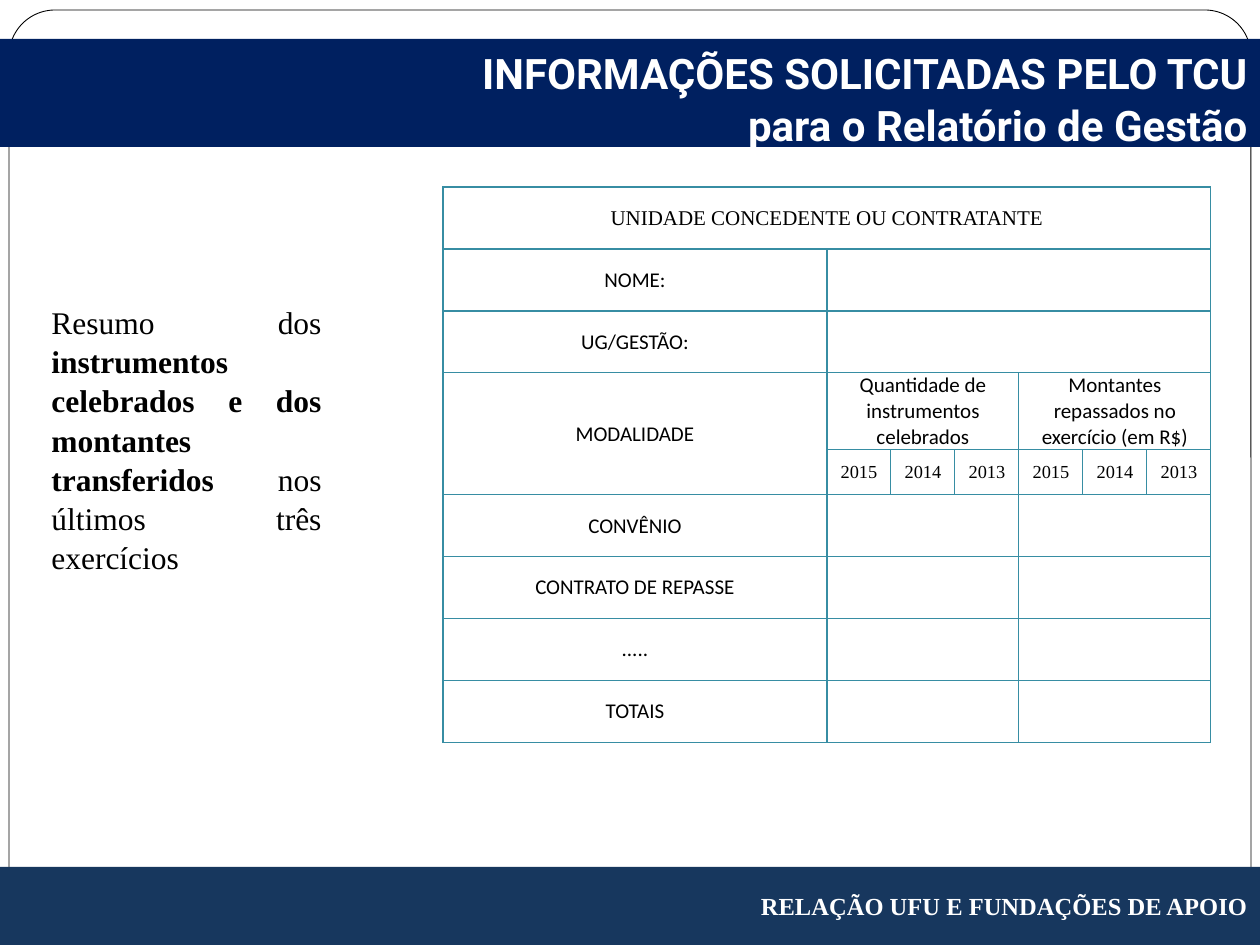
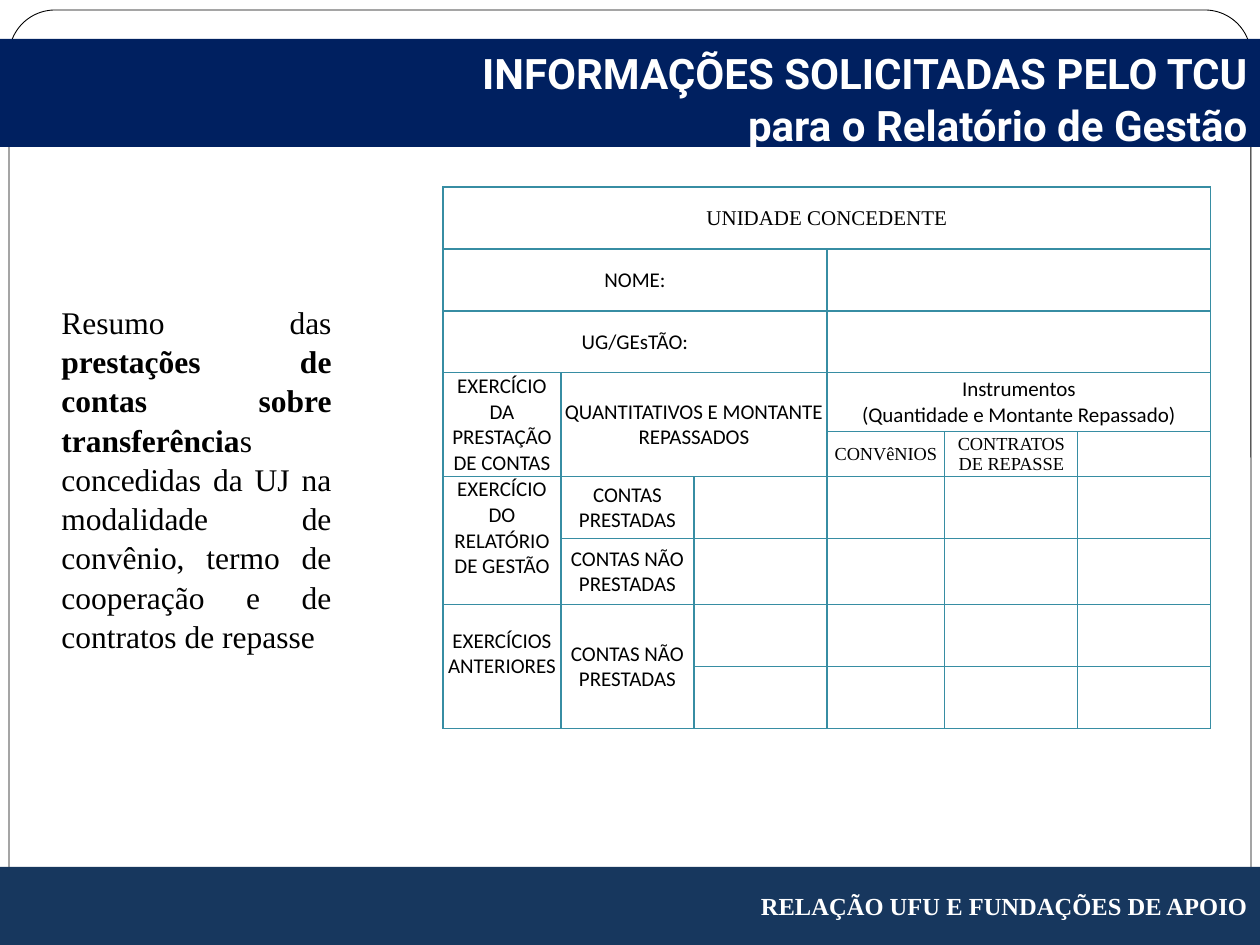
from itertools import product
from lxml import etree
from pptx import Presentation
from pptx import util as u
from pptx.dml.color import RGBColor
from pptx.enum import shapes, text
from pptx.oxml.ns import qn


class Theme:
    white = RGBColor.from_string("FFFFFF")
    black = RGBColor.from_string("000000")
    title_band = RGBColor.from_string("002060")
    footer_band = RGBColor.from_string("17375E")
    grid = "378DA3"
    title_size = 24
    body_size = 18
    footer_size = 14
    cell_size = 12
    subheading_size = 10.5
    frame_line = 0.5
    grid_line = 0.75
    spacing = 1.04
    serif = "Times New Roman"
    sans = "Calibri"
    display = "Roboto"


PX = u.Inches(1) / 126
TITLE = ["INFORMAÇÕES SOLICITADAS PELO TCU", "para o Relatório de Gestão"]
FOOTER = "RELAÇÃO UFU E FUNDAÇÕES DE APOIO"
HEADING_ROW, SUBHEADING_ROW = 0, 4
TRAILING_GAP = 26

YEARS = ["2015", "2014", "2013"]
MODALITIES = ["CONVÊNIO", "CONTRATO DE REPASSE", ".....", "TOTAIS"]

instruments = {
    "summary_left": 39,
    "summary": [
        ("Resumo dos ", False),
        ("instrumentos celebrados e dos montantes transferidos ", True),
        ("nos últimos três exercícios", False),
    ],
    "columns": [384] + [64] * 6,
    "rows": [62, 62, 62, 77, 45, 62, 62, 62, 62],
    "cells": [
        (0, 0, 1, 7, "UNIDADE CONCEDENTE OU CONTRATANTE"),
        (1, 0, 1, 1, "NOME:"),
        (1, 1, 1, 6, ""),
        (2, 0, 1, 1, "UG/GESTÃO:"),
        (2, 1, 1, 6, ""),
        (3, 0, 2, 1, "MODALIDADE"),
        (3, 1, 1, 3, "Quantidade de instrumentos celebrados"),
        (3, 4, 1, 3, "Montantes repassados no exercício (em R$)"),
    ]
    + [(4, col, 1, 1, year) for col, year in enumerate(YEARS * 2, 1)]
    + [(row, 0, 1, 1, name) for row, name in enumerate(MODALITIES, 5)]
    + [(row, col, 1, 3, "") for row, col in product(range(5, 9), (1, 4))],
}

accounts = {
    "summary_left": 49,
    "summary": [
        ("Resumo das ", False),
        ("prestações de contas sobre transferência", True),
        ("s concedidas da UJ na modalidade de convênio, termo de "
         "cooperação e de contratos de repasse", False),
    ],
    "columns": [118, 133, 133] * 2,
    "rows": [62, 62, 62, 59, 45, 62, 66, 62, 62],
    "cells": [
        (0, 0, 1, 6, "UNIDADE CONCEDENTE"),
        (1, 0, 1, 3, "NOME:"),
        (1, 3, 1, 3, ""),
        (2, 0, 1, 3, "UG/GEsTÃO:"),
        (2, 3, 1, 3, ""),
        (3, 0, 2, 1, "EXERCÍCIO DA PRESTAÇÃO DE CONTAS"),
        (3, 1, 2, 2, "QUANTITATIVOS E MONTANTE REPASSADOS"),
        (3, 3, 1, 3, "Instrumentos\n(Quantidade e Montante Repassado)"),
        (4, 3, 1, 1, "CONVêNIOS"),
        (4, 4, 1, 1, "CONTRATOS DE REPASSE"),
        (5, 0, 2, 1, "EXERCÍCIO DO RELATÓRIO DE GESTÃO"),
        (5, 1, 1, 1, "CONTAS PRESTADAS"),
        (6, 1, 1, 1, "CONTAS NÃO PRESTADAS"),
        (7, 0, 2, 1, "EXERCÍCIOS ANTERIORES"),
        (7, 1, 2, 1, "CONTAS NÃO PRESTADAS"),
    ],
}


def px(*lengths):
    return [u.Emu(round(length * PX)) for length in lengths]


def write(frame, lines, align, font, size, color, spacing=None):
    for index, runs in enumerate(lines):
        paragraph = frame.add_paragraph() if index else frame.paragraphs[0]
        paragraph.alignment = align
        if spacing:
            paragraph.line_spacing = spacing
        for words, bold in runs:
            run = paragraph.add_run()
            run.text = words
            run.font.name = font
            run.font.size = u.Pt(size)
            run.font.bold = bold
            run.font.color.rgb = color


deck = Presentation()
deck.slide_width, deck.slide_height = px(1260, 945)

for content in (instruments, accounts):
    slide = deck.slides.add_slide(deck.slide_layouts[6])

    border = slide.shapes.add_shape(
        shapes.MSO_SHAPE.ROUNDED_RECTANGLE, *px(9, 10, 1242, 922))
    border.adjustments[0] = 0.05
    border.shadow.inherit = False
    border.fill.solid()
    border.fill.fore_color.rgb = Theme.white
    border.line.color.rgb = Theme.black
    border.line.width = u.Pt(Theme.frame_line)

    bands = [
        (867, 78, Theme.footer_band, [FOOTER], Theme.serif,
         Theme.footer_size, text.MSO_ANCHOR.MIDDLE, None),
        (39, 108, Theme.title_band, TITLE, Theme.display,
         Theme.title_size, text.MSO_ANCHOR.TOP, Theme.spacing),
    ]
    for top, height, color, lines, font, size, anchor, spacing in bands:
        band = slide.shapes.add_shape(
            shapes.MSO_SHAPE.RECTANGLE, *px(0, top, 1260, height))
        band.shadow.inherit = False
        band.fill.solid()
        band.fill.fore_color.rgb = color
        band.line.fill.background()
        band.text_frame.vertical_anchor = anchor
        write(band.text_frame, [[(line, True)] for line in lines],
              text.PP_ALIGN.RIGHT, font, size, Theme.white, spacing)

    columns, rows = content["columns"], content["rows"]
    table = slide.shapes.add_table(
        len(rows), len(columns),
        *px(443, 187, sum(columns), sum(rows))).table
    table.first_row = False
    table.horz_banding = False
    for column, width in zip(table.columns, px(*columns)):
        column.width = width
    for row, height in zip(table.rows, px(*rows)):
        row.height = height

    for cell in table.iter_cells():
        cell.margin_left = cell.margin_right = 0
        cell.margin_top = cell.margin_bottom = 0
        cell.vertical_anchor = text.MSO_ANCHOR.MIDDLE
        properties = cell._tc.get_or_add_tcPr()
        for side in ("lnL", "lnR", "lnT", "lnB"):
            edge = etree.SubElement(properties, qn(f"a:{side}"),
                                    w=str(u.Pt(Theme.grid_line)))
            paint = etree.SubElement(edge, qn("a:solidFill"))
            etree.SubElement(paint, qn("a:srgbClr"), val=Theme.grid)
        cell.fill.background()

    for row, col, row_span, col_span, words in content["cells"]:
        cell = table.cell(row, col)
        if row_span * col_span > 1:
            cell.merge(table.cell(row + row_span - 1, col + col_span - 1))
        if row > SUBHEADING_ROW and col == 0 and row_span > 1:
            cell.margin_bottom = px(TRAILING_GAP)[0]
        if words:
            serif = row in (HEADING_ROW, SUBHEADING_ROW)
            small = row == SUBHEADING_ROW
            write(cell.text_frame,
                  [[(line, False)] for line in words.split("\n")],
                  text.PP_ALIGN.CENTER,
                  Theme.serif if serif else Theme.sans,
                  Theme.subheading_size if small else Theme.cell_size,
                  Theme.black)

    summary = slide.shapes.add_textbox(
        *px(content["summary_left"], 295, 295, 356)).text_frame
    summary.word_wrap = True
    write(summary, [content["summary"]], text.PP_ALIGN.JUSTIFY,
          Theme.serif, Theme.body_size, Theme.black, Theme.spacing)

deck.save("out.pptx")
